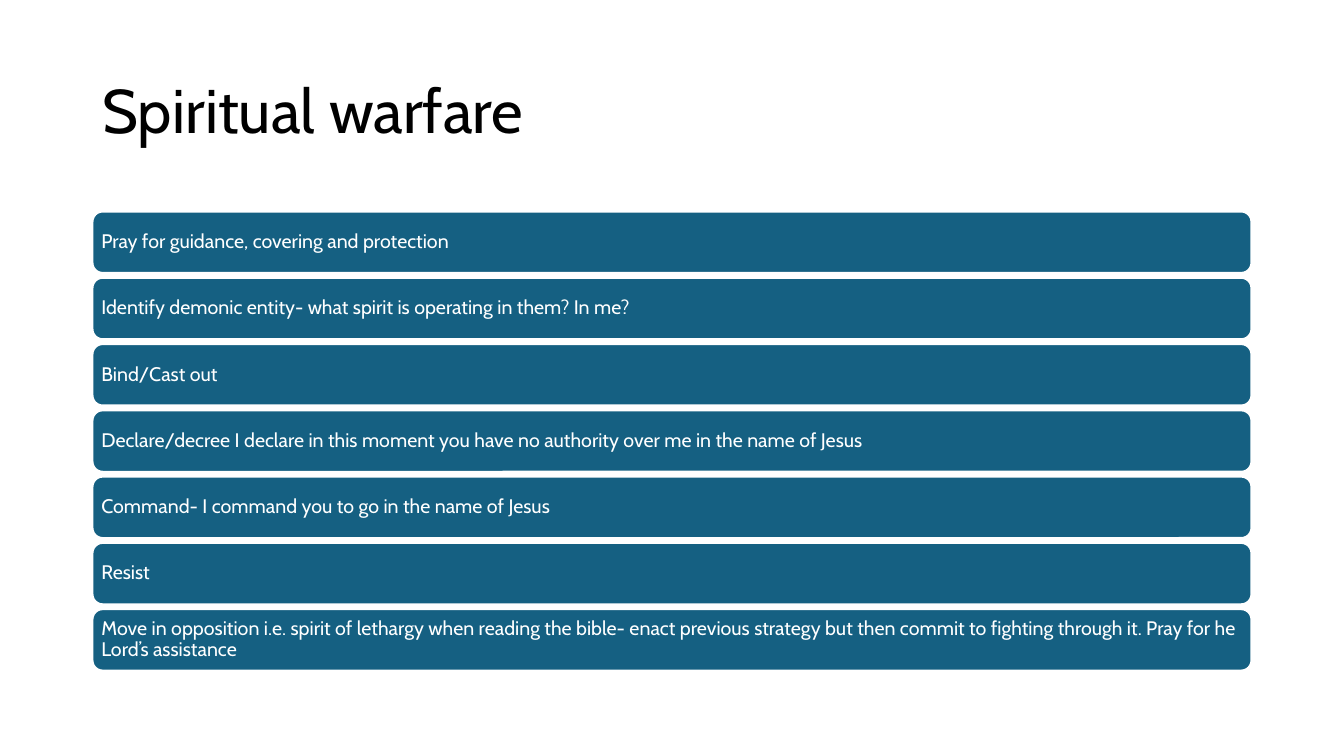
from pptx import Presentation
from pptx.dml.color import RGBColor
from pptx.enum.shapes import MSO_SHAPE
from pptx.enum.text import MSO_ANCHOR, PP_ALIGN
from pptx.util import Cm, Pt

# Content
TITLE = "Spiritual warfare"
STEPS = [
    "Pray for guidance, covering and protection",
    "Identify demonic entity- what spirit is operating in them? In me?",
    "Bind/Cast out",
    "Declare/decree I declare in this moment you have no authority over me in the name of Jesus",
    "Command- I command you to go in the name of Jesus",
    "Resist",
    "Move in opposition i.e. spirit of lethargy when reading the bible- enact previous strategy "
    "but then commit to fighting through it. Pray for he Lord’s assistance",
]

# Layout in centimetres
LEFT, WIDTH = 2.33, 29.21
TOP, HIGH, PITCH = 5.33, 1.55, 1.67


def color(code):
    return RGBColor.from_string(code)


def write(shape, text, size, ink, side=0.25, edge=0.13):
    frame = shape.text_frame
    frame.word_wrap = True
    frame.vertical_anchor = MSO_ANCHOR.MIDDLE
    frame.margin_left = frame.margin_right = Cm(side)
    frame.margin_top = frame.margin_bottom = Cm(edge)
    para = frame.paragraphs[0]
    para.alignment = PP_ALIGN.LEFT
    para.line_spacing = 0.9
    run = para.add_run()
    run.text = text
    run.font.name = "Cabin"
    run.font.size = Pt(size)
    run.font.color.rgb = color(ink)


def add_bar(slide, top, text):
    bar = slide.shapes.add_shape(
        MSO_SHAPE.ROUNDED_RECTANGLE, Cm(LEFT), Cm(top), Cm(WIDTH), Cm(HIGH))
    bar.shadow.inherit = False
    bar.fill.solid()
    bar.fill.fore_color.rgb = color("156082")
    bar.line.color.rgb = color("FFFFFF")
    bar.line.width = Pt(1.5)
    write(bar, text, size=14, ink="FFFFFF", side=0.15, edge=0.15)


def main():
    deck = Presentation()
    deck.slide_width, deck.slide_height = Cm(33.87), Cm(19.05)
    slide = deck.slides.add_slide(deck.slide_layouts[6])

    # Title
    head = slide.shapes.add_textbox(Cm(LEFT), Cm(1.02), Cm(WIDTH), Cm(3.68))
    write(head, TITLE, size=44, ink="000000")

    # Stack of steps
    for row, step in enumerate(STEPS):
        add_bar(slide, TOP + row * PITCH, step)

    deck.save("out.pptx")


if __name__ == "__main__":
    main()
